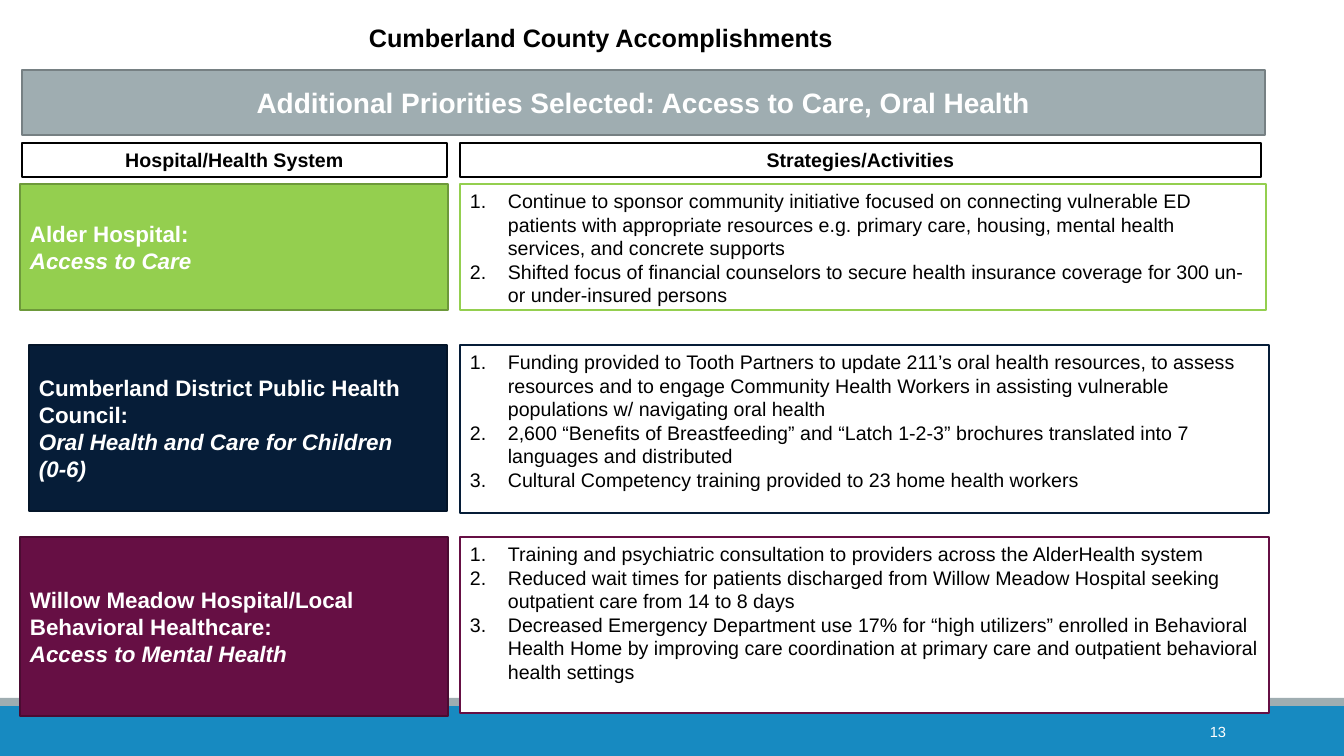
from pptx import Presentation
from pptx import util as u
from pptx.dml.color import RGBColor
from pptx.enum import shapes, text
from pptx.oxml.ns import qn
from lxml import etree

PX = 914400 / 100.8
WHITE = RGBColor(0xFF, 0xFF, 0xFF)
BLACK = RGBColor(0, 0, 0)
BLUE = RGBColor(0x17, 0x8A, 0xC1)
GREY = RGBColor(0x9F, 0xAD, 0xB1)
GREY_EDGE = RGBColor(0x76, 0x80, 0x83)
GREEN = RGBColor(0x94, 0xCF, 0x4F)
GREEN_EDGE = RGBColor(0x6D, 0x99, 0x3A)
NAVY = RGBColor(0x06, 0x1D, 0x38)
NAVY_EDGE = RGBColor(0x04, 0x15, 0x29)
PLUM = RGBColor(0x66, 0x0F, 0x44)
PLUM_EDGE = RGBColor(0x4B, 0x0B, 0x32)

LEFT, CENTER, RIGHT = text.PP_ALIGN.LEFT, text.PP_ALIGN.CENTER, text.PP_ALIGN.RIGHT
TOP, MIDDLE = text.MSO_ANCHOR.TOP, text.MSO_ANCHOR.MIDDLE


def px(length):
    return u.Emu(round(length * PX))


def number(para):
    """Give the paragraph an automatic number with a hanging indent."""
    properties = para._p.get_or_add_pPr()
    properties.set("marL", str(px(38)))
    properties.set("indent", str(-px(38)))
    etree.SubElement(properties, qn("a:buFont"), typeface="+mj-lt")
    etree.SubElement(properties, qn("a:buAutoNum"), type="arabicPeriod")


def write(box, lines, size=14, color=BLACK, bold=False, align=LEFT, anchor=TOP,
          numbered=False, italic_from=None):
    """Fill the box with one paragraph per line, in italics from italic_from on."""
    frame = box.text_frame
    frame.word_wrap = True
    frame.vertical_anchor = anchor
    for index, line in enumerate(lines):
        para = frame.paragraphs[0] if index == 0 else frame.add_paragraph()
        para.alignment = align
        if numbered:
            number(para)
        span = para.add_run()
        span.text = line
        font = span.font
        font.name, font.size, font.bold = "Arial", u.Pt(size), bold
        font.color.rgb = color
        font.italic = italic_from is not None and index >= italic_from


class SlideBuilder:
    def __init__(self, deck):
        self.page = deck.slides.add_slide(deck.slide_layouts[6])

    def rectangle(self, place, fill, edge=None):
        shape = self.page.shapes.add_shape(
            shapes.MSO_SHAPE.RECTANGLE, *map(px, place))
        shape.shadow.inherit = False
        shape.fill.solid()
        shape.fill.fore_color.rgb = fill
        if edge is None:
            shape.line.fill.background()
        else:
            shape.line.color.rgb = edge
            shape.line.width = u.Pt(1.25)
        return shape

    def label(self, place, line, **style):
        write(self.page.shapes.add_textbox(*map(px, place)), [line], **style)

    def panel(self, place, lines, fill, edge, **style):
        write(self.rectangle(place, fill, edge), lines, **style)


# Each row: name box, activities box, fill, edge, name lines, activities
PRIORITIES = [
    ((20, 184, 428, 126), (460, 184, 806, 126), GREEN, GREEN_EDGE,
     ["Alder Hospital:", "Access to Care"],
     ["Continue to sponsor community initiative focused on connecting vulnerable ED "
      "patients with appropriate resources e.g. primary care, housing, mental health "
      "services, and concrete supports",
      "Shifted focus of financial counselors to secure health insurance coverage for "
      "300 un- or under-insured persons"]),
    ((29, 345, 418, 166), (460, 345, 809, 168), NAVY, NAVY_EDGE,
     ["Cumberland District Public Health Council:",
      "Oral Health and Care for Children", "(0-6)"],
     ["Funding provided to Tooth Partners to update 211’s oral health resources, to "
      "assess resources and to engage Community Health Workers in assisting vulnerable "
      "populations w/ navigating oral health",
      "2,600 “Benefits of Breastfeeding” and “Latch 1-2-3” brochures translated into 7 "
      "languages and distributed",
      "Cultural Competency training provided to 23 home health workers"]),
    ((20, 537, 428, 179), (460, 537, 809, 176), PLUM, PLUM_EDGE,
     ["Willow Meadow Hospital/Local Behavioral Healthcare:",
      "Access to Mental Health"],
     ["Training and psychiatric consultation to providers across the AlderHealth system",
      "Reduced wait times for patients discharged from Willow Meadow Hospital seeking "
      "outpatient care from 14 to 8 days",
      "Decreased Emergency Department use 17% for “high utilizers” enrolled in "
      "Behavioral Health Home by improving care coordination at primary care and "
      "outpatient behavioral health settings"]),
]


def main():
    deck = Presentation()
    deck.slide_width, deck.slide_height = px(1344), px(756)
    slide = SlideBuilder(deck)

    slide.rectangle((0, 706, 1344, 50), BLUE)
    slide.rectangle((0, 698, 1344, 8), GREY)
    slide.label((359, 17, 695, 40), "Cumberland County Accomplishments",
                size=18, bold=True)
    slide.panel((22, 70, 1243, 65),
                ["Additional Priorities Selected: Access to Care, Oral Health"],
                GREY, GREY_EDGE, size=20, color=WHITE, bold=True,
                align=CENTER, anchor=MIDDLE)

    for left, width, heading in [(22, 425, "Hospital/Health System"),
                                 (460, 801, "Strategies/Activities")]:
        slide.panel((left, 143, width, 34), [heading], WHITE, BLACK,
                    bold=True, align=CENTER)

    for name_place, activity_place, fill, edge, names, activities in PRIORITIES:
        slide.panel(name_place, names, fill, edge, size=16, color=WHITE,
                    bold=True, anchor=MIDDLE, italic_from=1)
        slide.panel(activity_place, activities, WHITE, fill, numbered=True)

    slide.label((1092, 712, 144, 40), "13", size=10.5, color=WHITE,
                align=RIGHT, anchor=MIDDLE)
    deck.save("out.pptx")


if __name__ == "__main__":
    main()
